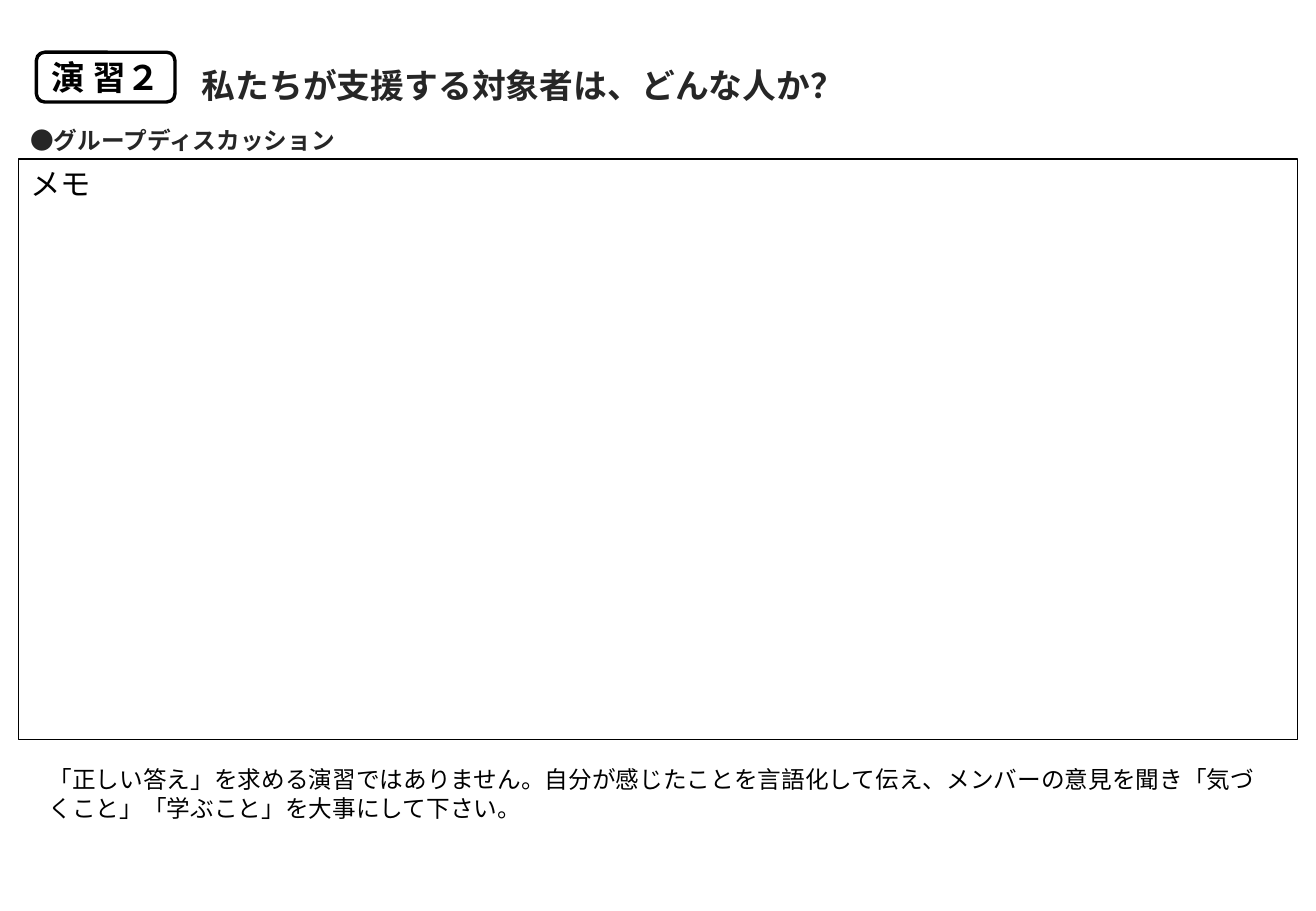
from lxml import etree
from pptx import Presentation
from pptx.dml.color import RGBColor
from pptx.enum.shapes import MSO_SHAPE
from pptx.enum.text import MSO_ANCHOR, MSO_AUTO_SIZE, PP_ALIGN
from pptx.oxml.ns import qn
from pptx.util import Inches, Pt

# Content
TITLE = "私たちが支援する対象者は、どんな人か？"
BADGE = "演 習２"
ACTIVITY = "●グループディスカッション"
MEMO = "メモ"
ADVICE = (
    "「正しい答え」を求める演習ではありません。自分が感じたことを言語化して伝え、"
    "メンバーの意見を聞き「気づくこと」「学ぶこと」を大事にして下さい。"
)

# Style
BLACK = RGBColor(0x00, 0x00, 0x00)
DARK_GRAY = RGBColor(0x26, 0x26, 0x26)
WHITE = RGBColor(0xFF, 0xFF, 0xFF)
JAPANESE_FONT = "Noto Sans CJK JP"
LATIN_FONT = "Calibri"

# Left, top, width, height in inches
TITLE_AREA = (1.56, 0.32, 6.85, 0.54)
BADGE_AREA = (0.3, 0.43, 1.14, 0.41)
ACTIVITY_AREA = (0.15, 0.87, 6.85, 0.41)
MEMO_AREA = (0.15, 1.31, 10.53, 4.78)
ADVICE_AREA = (0.3, 6.25, 10.14, 0.57)


def write(part, text, size, color=BLACK, bold=False, font=JAPANESE_FONT,
          align=PP_ALIGN.LEFT, anchor=MSO_ANCHOR.TOP, spacing=None, before=0):
    frame = part.text_frame
    frame.text = text
    frame.word_wrap = True
    frame.auto_size = MSO_AUTO_SIZE.NONE
    frame.vertical_anchor = anchor
    paragraph = frame.paragraphs[0]
    paragraph.alignment = align
    paragraph.space_before = Pt(before)
    if spacing:
        paragraph.line_spacing = spacing
    run = paragraph.runs[0]
    run.font.name = font
    run.font.size = Pt(size)
    run.font.bold = bold
    run.font.color.rgb = color
    # Japanese glyphs use the East Asian typeface
    east_asian = etree.Element(qn("a:ea"), typeface=JAPANESE_FONT)
    run.font._element.find(qn("a:latin")).addnext(east_asian)


def add_frame(slide, preset, area, line_width):
    frame = slide.shapes.add_shape(preset, *map(Inches, area))
    frame.shadow.inherit = False
    frame.line.color.rgb = BLACK
    frame.line.width = Pt(line_width)
    return frame


def main():
    deck = Presentation()
    deck.slide_width, deck.slide_height = Inches(10.83), Inches(7.5)
    slide = deck.slides.add_slide(deck.slide_layouts[5])

    # Title
    title = slide.shapes.title
    title.left, title.top, title.width, title.height = map(Inches, TITLE_AREA)
    write(title, TITLE, 20, DARK_GRAY, bold=True, spacing=1.5)

    # Memo area
    memo = add_frame(slide, MSO_SHAPE.RECTANGLE, MEMO_AREA, 0.75)
    memo.fill.background()
    write(memo, MEMO, 18, font=LATIN_FONT)

    # Activity heading and closing advice
    activity = slide.shapes.add_textbox(*map(Inches, ACTIVITY_AREA))
    write(activity, ACTIVITY, 14, DARK_GRAY, bold=True, spacing=1.5)
    advice = slide.shapes.add_textbox(*map(Inches, ADVICE_AREA))
    write(advice, ADVICE, 14, before=6)

    # Exercise number badge
    badge = add_frame(slide, MSO_SHAPE.ROUNDED_RECTANGLE, BADGE_AREA, 2)
    badge.fill.solid()
    badge.fill.fore_color.rgb = WHITE
    write(badge, BADGE, 20, bold=True, align=PP_ALIGN.CENTER,
          anchor=MSO_ANCHOR.MIDDLE)

    deck.save("out.pptx")


if __name__ == "__main__":
    main()
